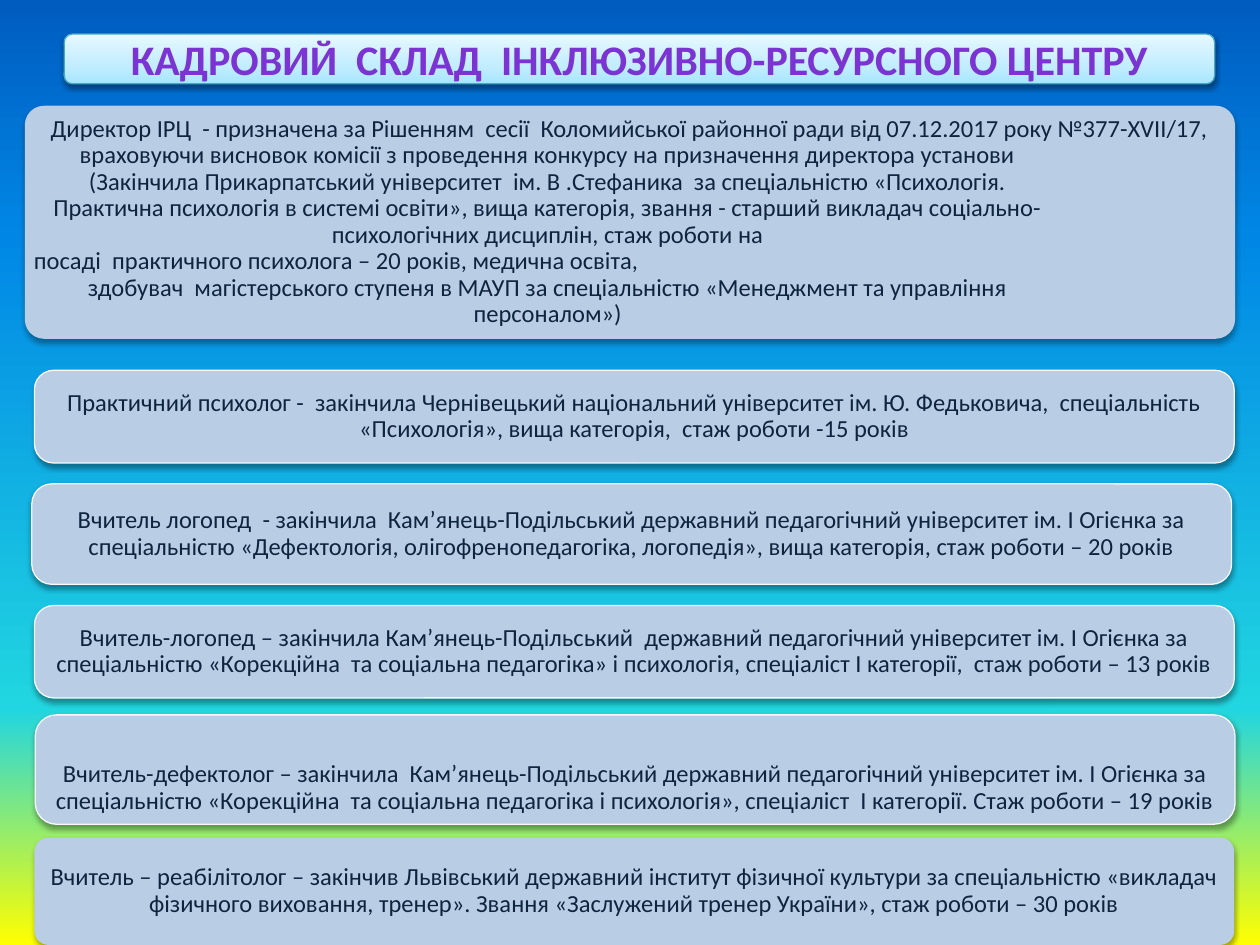
import pptx
import pptx.util
import pptx.dml.color
import pptx.enum.shapes
import pptx.enum.text
import pptx.oxml.ns
from lxml import etree

Pt = pptx.util.Pt
RGB = pptx.dml.color.RGBColor.from_string
qn = pptx.oxml.ns.qn
ALIGN = pptx.enum.text.PP_ALIGN
ANCHOR = pptx.enum.text.MSO_ANCHOR
ROUND = pptx.enum.shapes.MSO_SHAPE.ROUNDED_RECTANGLE

COLORS = {"title": "7B34D2", "edge": "46AAC5", "card": "B9CDE5",
          "rim": "F9F9F9", "ink": "0F243E", "shadow": "000000"}
SKY = [(0, "FFFF00"), (25, "21D6E0"), (75, "0087E6"), (100, "005CBF")]
ICE = [(0, "A7E6FF"), (35, "C1EDFF"), (100, "E7F8FF")]
HEAD = {"name": "Calibri", "size": Pt(24), "bold": True}
BODY = {"name": "Calibri", "size": Pt(14), "bold": False}

# Content: paragraphs are (text, alignment, right margin)
TITLE = "КАДРОВИЙ  СКЛАД  ІНКЛЮЗИВНО-РЕСУРСНОГО ЦЕНТРУ"
MID, LEFT = ALIGN.CENTER, ALIGN.LEFT
CHIEF = [
    ("Директор ІРЦ  - призначена за Рішенням  сесії  Коломийської районної ради "
     "від 07.12.2017 року №377-XVII/17,", MID, 0),
    ("враховуючи висновок комісії з проведення конкурсу на призначення "
     "директора установи", MID, 94),
    ("(Закінчила Прикарпатський університет  ім. В .Стефаника  за спеціальністю "
     "«Психологія. Практична психологія в системі освіти», вища категорія, звання - "
     "старший викладач соціально-психологічних дисциплін, стаж роботи на", MID, 0),
    ("посаді  практичного психолога – 20 років, медична освіта,", LEFT, 0),
    ("здобувач  магістерського ступеня в МАУП за спеціальністю "
     "«Менеджмент та управління персоналом»)", MID, 0),
]
STAFF = [
    "Практичний психолог -  закінчила Чернівецький національний університет "
    "ім. Ю. Федьковича,  спеціальність «Психологія», вища категорія,  "
    "стаж роботи -15 років",
    "Вчитель логопед  - закінчила  Кам’янець-Подільський державний педагогічний "
    "університет ім. І Огієнка за спеціальністю «Дефектологія, олігофренопедагогіка, "
    "логопедія», вища категорія, стаж роботи – 20 років",
    "Вчитель-логопед – закінчила Кам’янець-Подільський  державний педагогічний "
    "університет ім. І Огієнка за спеціальністю «Корекційна  та соціальна педагогіка» "
    "і психологія, спеціаліст І категорії,  стаж роботи – 13 років",
    "Вчитель-дефектолог – закінчила  Кам’янець-Подільський державний педагогічний "
    "університет ім. І Огієнка за спеціальністю «Корекційна  та соціальна педагогіка "
    "і психологія», спеціаліст  І категорії. Стаж роботи – 19 років",
    "Вчитель – реабілітолог – закінчив Львівський державний інститут фізичної культури "
    "за спеціальністю «викладач фізичного виховання, тренер». "
    "Звання «Заслужений тренер України», стаж роботи – 30 років",
]

# Card boxes: left, top, width, height, corner radius, rim, anchor
BOXES = [
    (14.2, 60.4, 691.6, 133.2, 11, False, ANCHOR.MIDDLE),
    (19.7, 211.6, 685.6, 53, 11, True, ANCHOR.MIDDLE),
    (18.2, 276.5, 685.6, 57.4, 11.5, True, ANCHOR.MIDDLE),
    (19.7, 346, 685.6, 52.8, 11, True, ANCHOR.MIDDLE),
    (20.2, 408.5, 685.6, 62.5, 12, True, ANCHOR.BOTTOM),
    (19.7, 478.6, 685.6, 61.4, 8, False, ANCHOR.MIDDLE),
]


def blend(fill, node, stops):
    """Fill with an upward gradient of any number of stops."""
    fill.gradient()
    fill.gradient_angle = 90
    group = next(node.iter(qn("a:gsLst")))
    for old in list(group):
        group.remove(old)
    for pos, tint in stops:
        stop = etree.SubElement(group, qn("a:gs"), pos=str(pos * 1000))
        etree.SubElement(stop, qn("a:srgbClr"), val=tint)


def shade(shape, alpha, dist):
    shape.shadow.inherit = False
    group = shape._element.spPr.find(qn("a:effectLst"))
    drop = etree.SubElement(group, qn("a:outerShdw"), blurRad=str(Pt(3.1)),
                            dist=str(Pt(dist)), dir="5400000", rotWithShape="0")
    tint = etree.SubElement(drop, qn("a:srgbClr"), val=COLORS["shadow"])
    etree.SubElement(tint, qn("a:alpha"), val=str(alpha * 1000))


def panel(slide, box, round_by, rim):
    shape = slide.shapes.add_shape(ROUND, *map(Pt, box))
    shape.adjustments[0] = round_by / box[3]
    if rim:
        shape.line.color.rgb = RGB(COLORS[rim])
        shape.line.width = Pt(0.75)
    else:
        shape.line.fill.background()
    return shape


def write(shape, paras, style, ink, anchor, pad, space=1.0):
    frame = shape.text_frame
    look = {"word_wrap": True, "vertical_anchor": anchor,
            "margin_left": Pt(2), "margin_right": Pt(2),
            "margin_top": Pt(pad), "margin_bottom": Pt(pad)}
    for key, val in look.items():
        setattr(frame, key, val)
    for i, (text, align, right) in enumerate(paras):
        para = frame.paragraphs[0] if i == 0 else frame.add_paragraph()
        para.alignment = align
        para.line_spacing = space
        if right:
            para._p.get_or_add_pPr().set("marR", str(Pt(right)))
        run = para.add_run()
        run.text = text
        for key, val in style.items():
            setattr(run.font, key, val)
        run.font.color.rgb = RGB(COLORS[ink])


def main():
    deck = pptx.Presentation()
    deck.slide_width, deck.slide_height = Pt(720), Pt(540)
    slide = deck.slides.add_slide(deck.slide_layouts[6])
    blend(slide.background.fill, slide._element, SKY)

    # Title bar
    bar = panel(slide, (36.7, 19.5, 657.4, 28.4), 4.7, "edge")
    blend(bar.fill, bar._element, ICE)
    shade(bar, 38, 1.6)
    write(bar, [(TITLE, MID, 0)], HEAD, "title", ANCHOR.MIDDLE, 0)

    # Staff cards
    texts = [CHIEF] + [[(text, MID, 0)] for text in STAFF]
    for paras, (*box, curve, rim, anchor) in zip(texts, BOXES):
        card = panel(slide, box, curve, "rim" if rim else None)
        card.fill.solid()
        card.fill.fore_color.rgb = RGB(COLORS["card"])
        shade(card, 35, 1.8)
        write(card, paras, BODY, "ink", anchor, 2, 0.9)

    deck.save("out.pptx")


if __name__ == "__main__":
    main()
